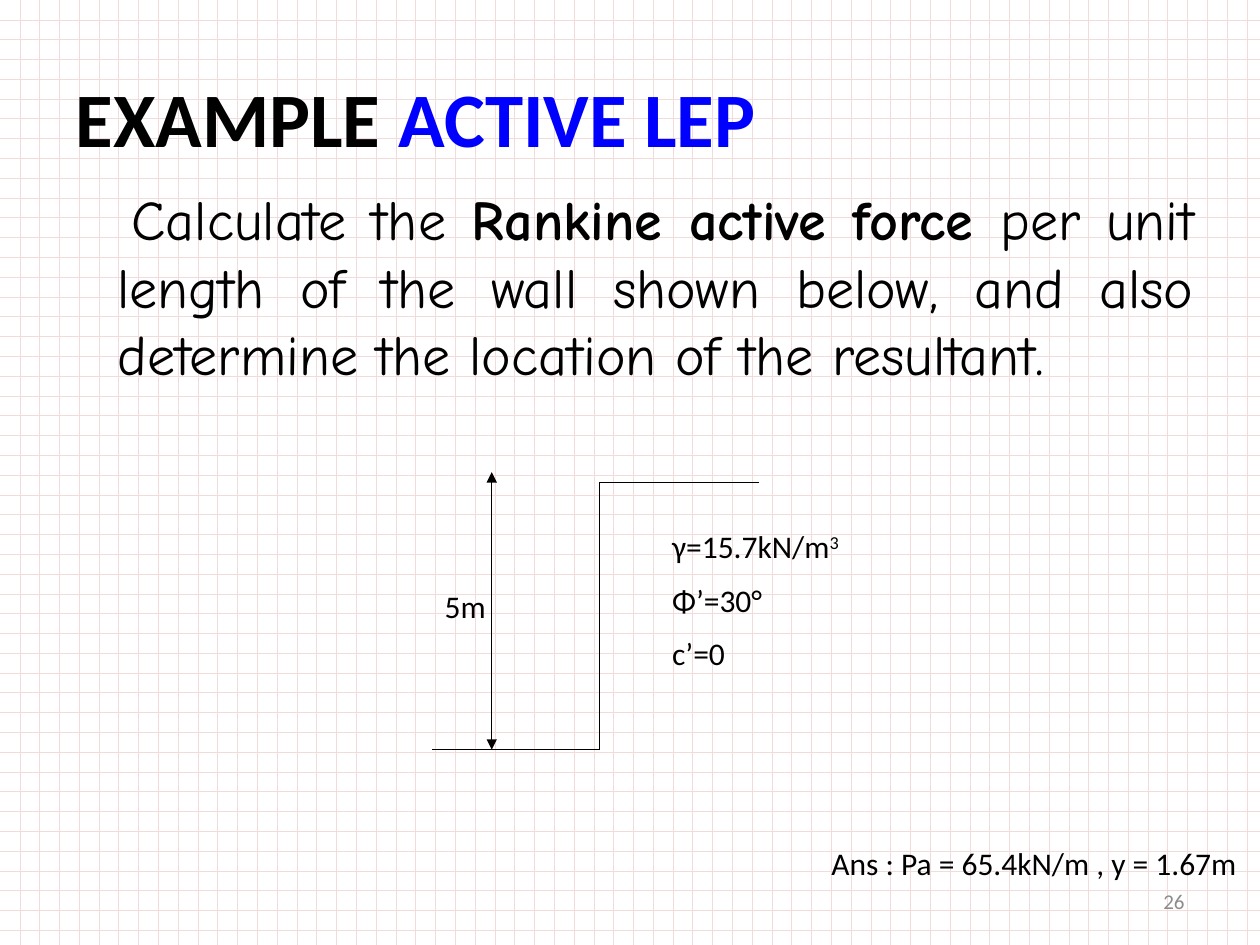
import pptx
import pptx.util
import pptx.dml.color
import pptx.enum.dml
import pptx.enum.shapes
import pptx.enum.text
import pptx.oxml.ns
from lxml import etree

Pt = pptx.util.Pt
ALIGN = pptx.enum.text.PP_ALIGN
ANCHOR = pptx.enum.text.MSO_ANCHOR
AUTO_SIZE = pptx.enum.text.MSO_AUTO_SIZE
qn = pptx.oxml.ns.qn

COLORS = {"text": "000000", "accent": "0000FF", "number": "8C8C8C",
          "grid": "F2DCDB", "paper": "FFFFFF"}


def color(name):
    return pptx.dml.color.RGBColor.from_string(COLORS[name])


def place(shape, box):
    shape.left, shape.top, shape.width, shape.height = (Pt(value) for value in box)


def style(font, size, name="Calibri", color_name="text"):
    font.size, font.name = Pt(size), name
    font.color.rgb = color(color_name)


def add_runs(paragraph, *texts):
    runs = []
    for text in texts:
        run = paragraph.add_run()
        run.text = text
        runs.append(run)
    return runs


def add_label(slide, box, lines, size=18, color_name="text", align=ALIGN.LEFT):
    """Text box with one paragraph per line; returns its paragraphs."""
    frame = slide.shapes.add_textbox(*(Pt(value) for value in box)).text_frame
    frame.word_wrap = True
    for index, line in enumerate(lines):
        paragraph = frame.add_paragraph() if index else frame.paragraphs[0]
        paragraph.alignment = align
        paragraph.space_before = Pt(9 if index else 0)
        style(paragraph.font, size, color_name=color_name)
        add_runs(paragraph, line)
    return frame.paragraphs


def add_line(slide, start, end, arrows=False):
    line = slide.shapes.add_connector(
        pptx.enum.shapes.MSO_CONNECTOR.STRAIGHT, *(Pt(value) for value in start + end))
    line.line.color.rgb = color("text")
    line.line.width = Pt(0.75)
    if arrows:
        outline = line.line._get_or_add_ln()
        for tag in ("a:headEnd", "a:tailEnd"):
            etree.SubElement(outline, qn(tag), type="triangle")
    etree.SubElement(line._element.spPr, qn("a:effectLst"))


def set_background(slide):
    fill = slide.background.fill
    fill.patterned()
    fill.pattern = pptx.enum.dml.MSO_PATTERN.DOTTED_GRID
    fill.fore_color.rgb = color("grid")
    fill.back_color.rgb = color("paper")


def fill_title(slide, box):
    title = slide.shapes.title
    place(title, box)
    title.text_frame.auto_size = AUTO_SIZE.NONE
    title.text_frame.vertical_anchor = ANCHOR.MIDDLE
    paragraph = title.text_frame.paragraphs[0]
    paragraph.alignment = ALIGN.JUSTIFY
    style(paragraph.font, 44)
    paragraph.font.bold = True
    topic = add_runs(paragraph, "EXAMPLE ", "ACTIVE LEP")[1]
    topic.font.color.rgb = color("accent")


def fill_question(slide, box):
    body = slide.placeholders[1]
    place(body, box)
    body.text_frame.auto_size = AUTO_SIZE.NONE
    paragraph = body.text_frame.paragraphs[0]
    paragraph.alignment = ALIGN.JUSTIFY
    paragraph.space_before = Pt(6)
    style(paragraph.font, 32, "Comic Neue")
    # Hanging text without a bullet
    properties = paragraph._p.get_or_add_pPr()
    properties.set("marL", str(Pt(29)))
    properties.set("indent", str(Pt(8)))
    bullet = etree.Element(qn("a:buNone"))
    properties.find(qn("a:defRPr")).addprevious(bullet)
    force = add_runs(
        paragraph, "Calculate the ", "Rankine active force ",
        "per unit length of the wall shown below, and also determine "
        "the location of the resultant.")[1]
    force.font.bold = True


def draw_wall(slide, box):
    left, top, width, height = box
    right, bottom = left + width, top + height
    wall = left + 95.5
    arrow = left + 34

    # Ground surface, wall face and base
    corners = [(right, top), (wall, top), (wall, bottom), (left, bottom)]
    for start, end in zip(corners, corners[1:]):
        add_line(slide, start, end)

    # Height dimension
    add_line(slide, (arrow, top - 6), (arrow, bottom), arrows=True)
    add_label(slide, (left, top + 56, 51, 29), ["5m"])

    # Soil properties
    soil = add_label(slide, (wall + 34.5, top + 22, 232.5, 94),
                     ["γ=15.7kN/m", "Φ’=30°", "c’=0"])
    cube = add_runs(soil[0], "3")[0]
    cube._r.get_or_add_rPr().set("baseline", "30000")


def add_footer(slide, box):
    left, top, width, height = box
    add_label(slide, (left, top, width, height), ["Ans : Pa = 65.4kN/m , y = 1.67m"])
    add_label(slide, (left + 48, top + 25, 168, 22), ["26"], 12, "number", ALIGN.RIGHT)


def main():
    presentation = pptx.Presentation()
    presentation.slide_width, presentation.slide_height = Pt(720), Pt(540)
    slide = presentation.slides.add_slide(presentation.slide_layouts[1])
    set_background(slide)
    fill_title(slide, (36, 21.6, 648, 90))
    fill_question(slide, (31, 102, 659, 317.5))
    draw_wall(slide, (247, 275.8, 186.5, 152.6))
    add_footer(slide, (468, 479, 252, 29))
    presentation.save("out.pptx")


if __name__ == "__main__":
    main()
